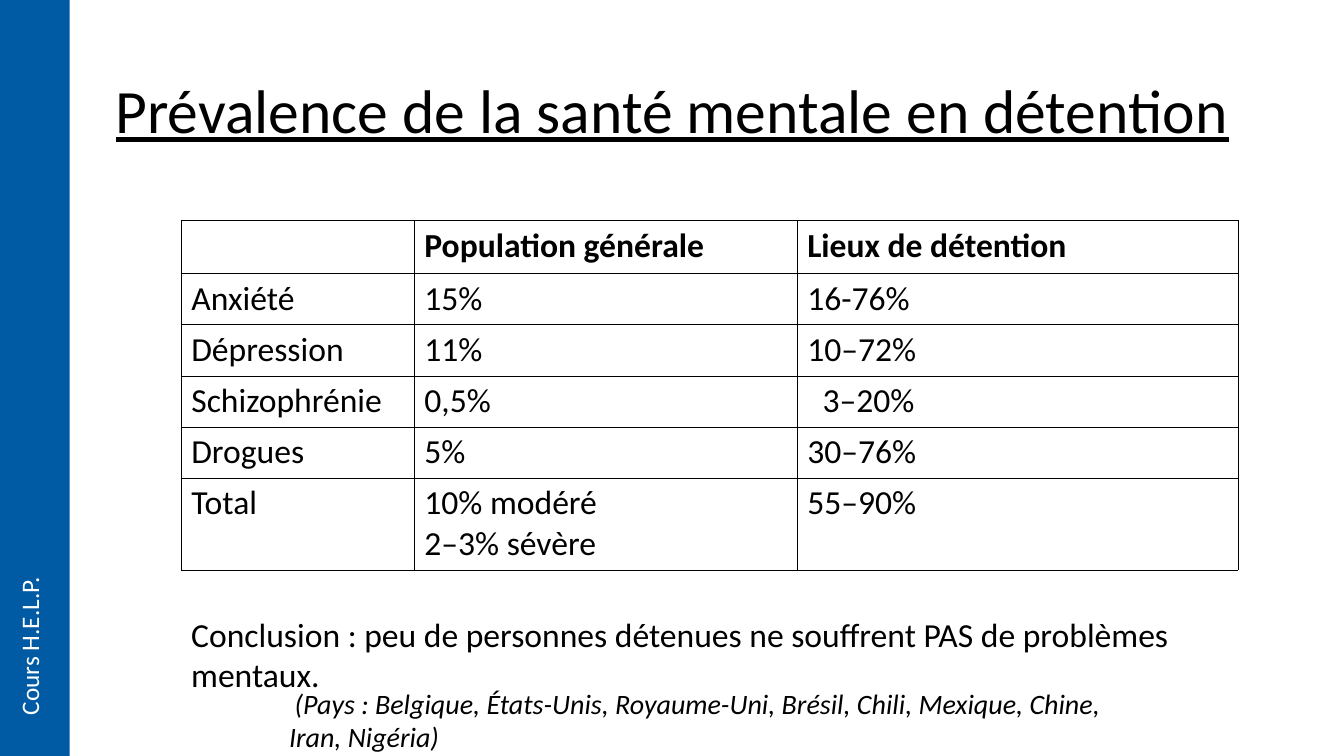
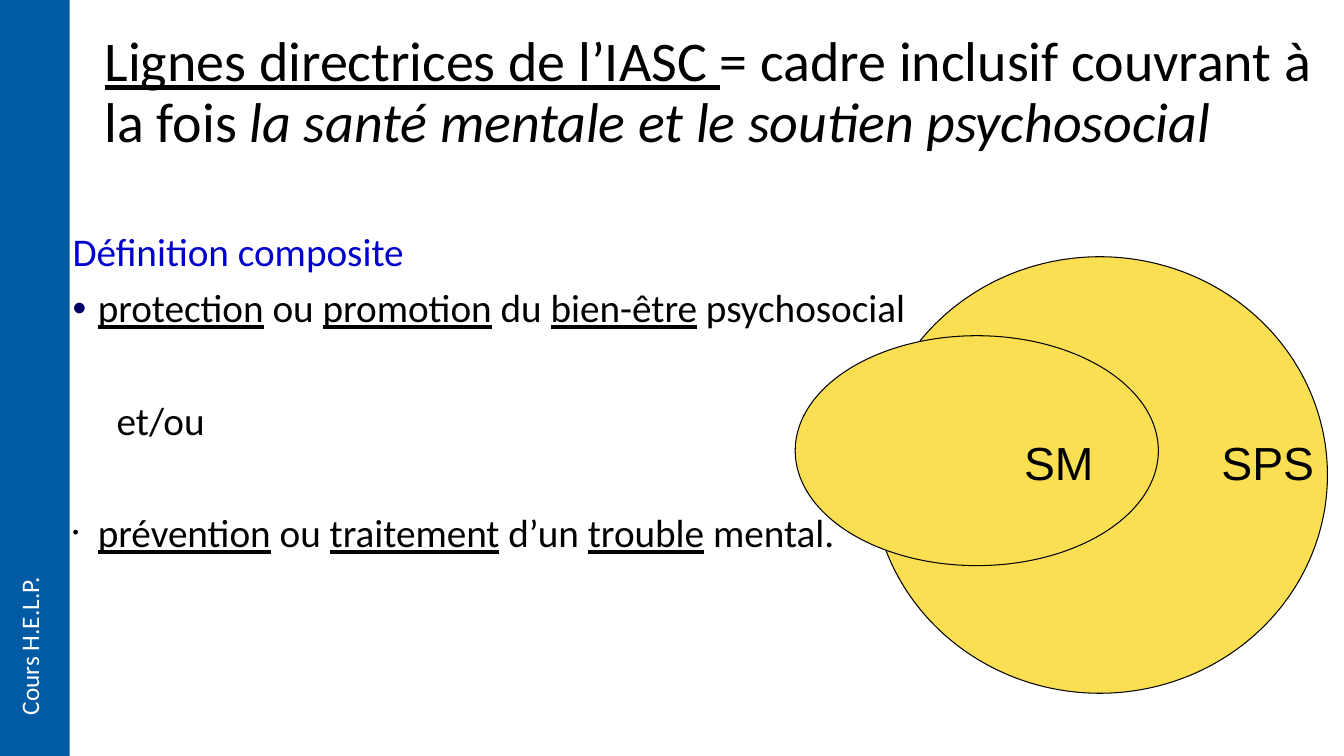
from dataclasses import dataclass
from typing import Optional

from lxml.etree import SubElement
from pptx import Presentation
from pptx.dml.color import RGBColor
from pptx.enum.shapes import MSO_SHAPE
from pptx.enum.text import MSO_ANCHOR, PP_ALIGN
from pptx.oxml import parse_xml
from pptx.oxml.ns import nsdecls, qn
from pptx.util import Pt

COLORS = {
    "band": "005BA4",
    "white": "FFFFFF",
    "black": "000000",
    "heading": "0000CC",
    "bullet": "000066",
    "circle": "FBDF53",
}


@dataclass(frozen=True)
class Box:
    left: float
    top: float
    width: float
    height: float

    def lengths(self) -> tuple:
        return Pt(self.left), Pt(self.top), Pt(self.width), Pt(self.height)


@dataclass(frozen=True)
class Span:
    text: str
    underline: bool = False
    italic: bool = False
    bold: bool = False


@dataclass(frozen=True)
class Line:
    spans: tuple
    size: float
    color: str = "black"
    font: str = "Calibri"
    align: PP_ALIGN = PP_ALIGN.LEFT
    spacing: float = 1.0
    before: float = 0
    margin: float = 0
    indent: float = 0
    bullet_color: Optional[str] = None
    bullet_percent: int = 100


BAND = Box(0, 0, 49.7, 540)
COURSE = Box(6.5, 404, 36, 113.8)


def rgb(name: str) -> RGBColor:
    return RGBColor.from_string(COLORS[name])


def add_bullet(properties, line: Line) -> None:
    color = SubElement(properties, qn("a:buClr"))
    SubElement(color, qn("a:srgbClr"), val=COLORS[line.bullet_color])
    SubElement(properties, qn("a:buSzPct"), val=str(line.bullet_percent * 1000))
    SubElement(properties, qn("a:buFont"), typeface="Arial")
    SubElement(properties, qn("a:buChar"), char="•")


def write(frame, lines: list[Line]) -> None:
    for index, line in enumerate(lines):
        paragraph = frame.paragraphs[0] if index == 0 else frame.add_paragraph()
        paragraph.alignment = line.align
        paragraph.line_spacing = line.spacing
        paragraph.space_before = Pt(line.before)
        properties = paragraph._p.get_or_add_pPr()
        properties.set("marL", str(Pt(line.margin)))
        properties.set("indent", str(Pt(line.indent)))
        if line.bullet_color:
            add_bullet(properties, line)
        for span in line.spans:
            run = paragraph.add_run()
            run.text = span.text
            font = run.font
            font.name, font.size = line.font, Pt(line.size)
            font.color.rgb = rgb(line.color)
            font.underline, font.italic, font.bold = span.underline, span.italic, span.bold


def add_text(slide, box: Box, lines: list[Line], anchor=MSO_ANCHOR.TOP, inset: Optional[float] = None):
    frame = slide.shapes.add_textbox(*box.lengths()).text_frame
    frame.word_wrap = True
    frame.vertical_anchor = anchor
    if inset is not None:
        frame.margin_left = frame.margin_right = Pt(inset)
        frame.margin_top = frame.margin_bottom = Pt(inset)
    write(frame, lines)
    return frame


def add_shape(slide, preset: MSO_SHAPE, box: Box, fill: str, outline: Optional[str] = None) -> None:
    shape = slide.shapes.add_shape(preset, *box.lengths())
    shape.shadow.inherit = False
    shape.fill.solid()
    shape.fill.fore_color.rgb = rgb(fill)
    if outline:
        shape.line.color.rgb = rgb(outline)
        shape.line.width = Pt(0.75)
    else:
        shape.line.fill.background()


def add_title(slide, box: Box, spans: tuple, size: float, align=PP_ALIGN.LEFT) -> None:
    add_text(slide, box, [Line(spans, size, align=align, spacing=0.9)], MSO_ANCHOR.MIDDLE)


def add_course_band(slide) -> None:
    add_shape(slide, MSO_SHAPE.RECTANGLE, BAND, "band")
    frame = add_text(slide, COURSE, [Line((Span("Cours H.E.L.P."),), 18, "white")])
    frame._txBody.bodyPr.set("vert", "vert270")


def add_borders(cell) -> None:
    properties = cell._tc.get_or_add_tcPr()
    for position, side in enumerate(("lnL", "lnR", "lnT", "lnB")):
        border = parse_xml(
            f'<a:{side} {nsdecls("a")} w="{Pt(0.25)}"><a:solidFill>'
            f'<a:srgbClr val="{COLORS["black"]}"/></a:solidFill></a:{side}>'
        )
        properties.insert(position, border)


def add_prevalence_table(slide, box: Box, widths: list[float], heights: list[float], rows: list[tuple]) -> None:
    table = slide.shapes.add_table(len(rows), len(widths), *box.lengths()).table
    table.first_row = table.horz_banding = False
    for column, width in zip(table.columns, widths):
        column.width = Pt(width)
    for row_index, (row, height, texts) in enumerate(zip(table.rows, heights, rows)):
        row.height = Pt(height)
        for cell, text in zip(row.cells, texts):
            cell.fill.solid()
            cell.fill.fore_color.rgb = rgb("white")
            add_borders(cell)
            margin = 11 if text == "3–20%" else 0
            write(cell.text_frame, [
                Line((Span(part, bold=row_index == 0),) if part else (), 24, margin=margin)
                for part in text.split("\n")
            ])


def build_prevalence(slide) -> None:
    add_title(slide, Box(66.2, 28.8, 828, 104.4),
              (Span("Prévalence de la santé mentale en détention", underline=True),),
              44, PP_ALIGN.CENTER)
    widths = [166.5, 273.5, 315]
    heights = [37.9] + [36.5] * 4 + [65.8]
    rows = [
        ("", "Population générale", "Lieux de détention"),
        ("Anxiété", "15%", "16-76%"),
        ("Dépression", "11%", "10–72%"),
        ("Schizophrénie", "0,5%", "3–20%"),
        ("Drogues", "5%", "30–76%"),
        ("Total", "10% modéré\n2–3% sévère", "55–90%"),
    ]
    add_prevalence_table(slide, Box(129.5, 157.5, sum(widths), sum(heights)), widths, heights, rows)
    add_text(slide, Box(129.5, 435, 728.6, 66), [Line((Span(
        "Conclusion : peu de personnes détenues ne souffrent PAS de problèmes mentaux."),), 24)])
    add_text(slide, Box(199.4, 486.7, 601, 53), [Line((Span(
        "(Pays : Belgique, États-Unis, Royaume-Uni, Brésil, Chili, Mexique, Chine, Iran, Nigéria)",
        italic=True),), 20, indent=4)])


def bullet_line(spans: tuple, before: float, color: str, percent: int) -> Line:
    return Line(spans, 28, spacing=0.9, before=before, margin=18, indent=-18,
                bullet_color=color, bullet_percent=percent)


def build_guidelines(slide) -> None:
    add_title(slide, Box(67.7, 5.8, 880.6, 122.4), (
        Span("Lignes directrices de l’IASC ", underline=True),
        Span("= cadre inclusif couvrant à la fois "),
        Span("la santé mentale et le soutien psychosocial", italic=True),
    ), 40)
    protection = (
        Span("protection", underline=True), Span(" ou "),
        Span("promotion", underline=True), Span(" du "),
        Span("bien-être", underline=True), Span(" psychosocial"),
    )
    prevention = (
        Span("prévention", underline=True), Span(" ou "),
        Span("traitement", underline=True), Span(" d’un "),
        Span("trouble", underline=True), Span(" mental."),
    )
    add_text(slide, Box(44.8, 162.7, 870, 370), [
        Line((Span("Définition composite"),), 28, "heading", spacing=0.9, before=10),
        bullet_line(protection, 10, "bullet", 100),
        Line((Span("et/ou"),), 28, spacing=0.9, before=50, margin=31.5),
        bullet_line(prevention, 50, "black", 45),
    ])
    for circle in (Box(622.8, 183.4, 325.4, 311.8), Box(568, 239.8, 259.4, 164.2)):
        add_shape(slide, MSO_SHAPE.OVAL, circle, "circle", "black")
    for label, left in (("SM", 731.5), ("SPS", 872.5)):
        add_text(slide, Box(left, 310, 80, 40),
                 [Line((Span(label),), 33.1, font="Arial")], inset=0)


def main() -> None:
    deck = Presentation()
    deck.slide_width, deck.slide_height = Pt(960), Pt(540)
    for build in (build_prevalence, build_guidelines):
        slide = deck.slides.add_slide(deck.slide_layouts[6])
        build(slide)
        add_course_band(slide)
    deck.save("out.pptx")


if __name__ == "__main__":
    main()
